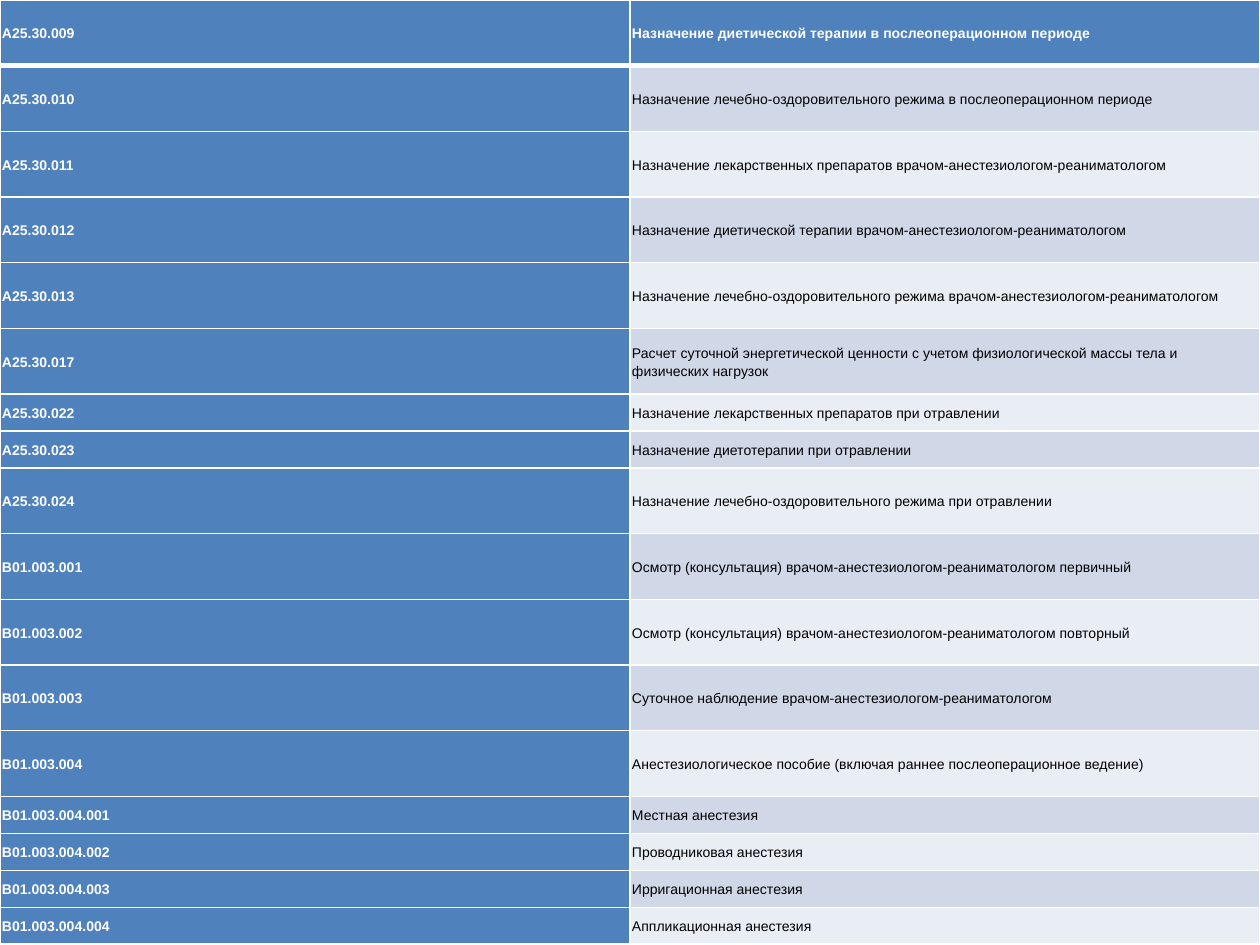
from lxml.etree import SubElement
from pptx import Presentation
from pptx.dml.color import RGBColor
from pptx.enum.text import MSO_ANCHOR
from pptx.oxml.ns import qn
from pptx.util import Emu, Pt

WIDTH, HEIGHT = 1260, 945
SHORT_ROW = 37
INSET = 2
BLUE, WHITE, BLACK = "4F81BD", "FFFFFF", "000000"
BANDS = ["E9EDF4", "D0D8E8"]

SERVICES = [
    ("A25.30.009", "Назначение диетической терапии в послеоперационном периоде"),
    ("A25.30.010", "Назначение лечебно-оздоровительного режима в послеоперационном периоде"),
    ("A25.30.011", "Назначение лекарственных препаратов врачом-анестезиологом-реаниматологом"),
    ("A25.30.012", "Назначение диетической терапии врачом-анестезиологом-реаниматологом"),
    ("A25.30.013", "Назначение лечебно-оздоровительного режима врачом-анестезиологом-реаниматологом"),
    ("A25.30.017", "Расчет суточной энергетической ценности с учетом физиологической массы тела и физических нагрузок"),
    ("A25.30.022", "Назначение лекарственных препаратов при отравлении"),
    ("A25.30.023", "Назначение диетотерапии при отравлении"),
    ("A25.30.024", "Назначение лечебно-оздоровительного режима при отравлении"),
    ("B01.003.001", "Осмотр (консультация) врачом-анестезиологом-реаниматологом первичный"),
    ("B01.003.002", "Осмотр (консультация) врачом-анестезиологом-реаниматологом повторный"),
    ("B01.003.003", "Суточное наблюдение врачом-анестезиологом-реаниматологом"),
    ("B01.003.004", "Анестезиологическое пособие (включая раннее послеоперационное ведение)"),
    ("B01.003.004.001", "Местная анестезия"),
    ("B01.003.004.002", "Проводниковая анестезия"),
    ("B01.003.004.003", "Ирригационная анестезия"),
    ("B01.003.004.004", "Аппликационная анестезия"),
]
SHORT_ROWS = {6, 7, 13, 14, 15, 16}
TALL_ROW = (HEIGHT - SHORT_ROW * len(SHORT_ROWS)) / (len(SERVICES) - len(SHORT_ROWS))


def px(length):
    return Emu(round(length * 914400 / 126))


def color(value):
    return RGBColor.from_string(value)


presentation = Presentation()
presentation.slide_width = px(WIDTH)
presentation.slide_height = px(HEIGHT)
slide = presentation.slides.add_slide(presentation.slide_layouts[6])

table = slide.shapes.add_table(len(SERVICES), 2, 0, 0, px(WIDTH), px(HEIGHT)).table
table.first_col = True

for row_index, service in enumerate(SERVICES):
    table.rows[row_index].height = px(SHORT_ROW if row_index in SHORT_ROWS else TALL_ROW)
    for column_index, text in enumerate(service):
        cell = table.cell(row_index, column_index)
        heading = row_index == 0 or column_index == 0
        cell.vertical_anchor = MSO_ANCHOR.MIDDLE
        cell.margin_left = cell.margin_right = px(INSET)
        cell.margin_top = cell.margin_bottom = px(INSET)

        cell.text = text
        paragraph = cell.text_frame.paragraphs[0]
        paragraph.line_spacing = 1.15
        paragraph.space_after = Pt(10)
        paragraph.font.name = "Arial"
        paragraph.font.size = Pt(8)
        paragraph.font.bold = heading
        paragraph.font.color.rgb = color(WHITE if heading else BLACK)

        properties = cell._tc.get_or_add_tcPr()
        for side in ("L", "R", "T", "B"):
            thick = (row_index, side) in {(0, "B"), (1, "T")}
            border = SubElement(properties, qn(f"a:ln{side}"), w=str(Pt(3 if thick else 1)))
            border_fill = SubElement(border, qn("a:solidFill"))
            SubElement(border_fill, qn("a:srgbClr"), val=WHITE)

        cell.fill.solid()
        cell.fill.fore_color.rgb = color(BLUE if heading else BANDS[row_index % 2])

presentation.save("out.pptx")
